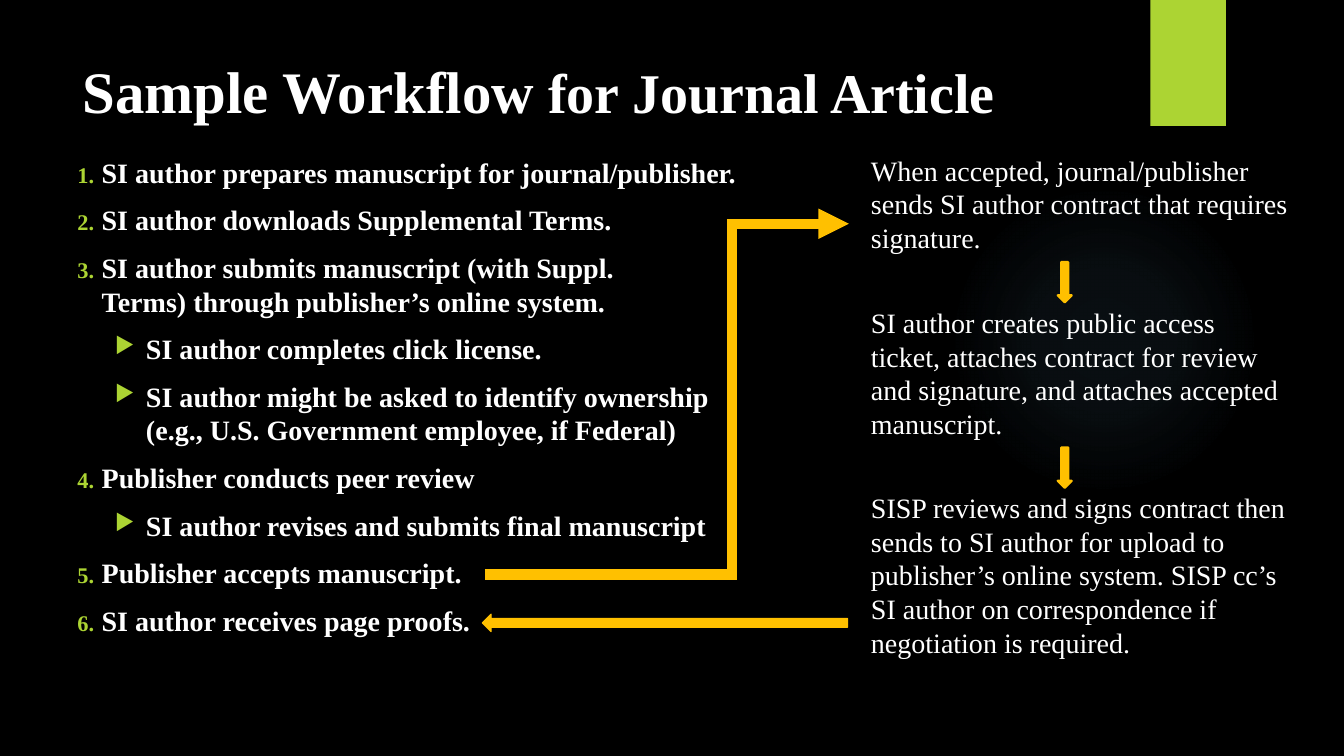
from dataclasses import dataclass

from pptx import Presentation
from pptx.dml.color import RGBColor
from pptx.enum.shapes import MSO_CONNECTOR as Connector, MSO_SHAPE as Preset
from pptx.enum.text import MSO_ANCHOR as Anchor, PP_ALIGN as Align
from pptx.oxml import parse_xml
from pptx.oxml.ns import nsdecls, qn
from pptx.util import Inches, Pt

BLACK = RGBColor(0x00, 0x00, 0x00)
WHITE = RGBColor(0xFF, 0xFF, 0xFF)
LIME = RGBColor(0xAC, 0xD4, 0x33)
AMBER = RGBColor(0xFF, 0xC0, 0x00)
GLOW = RGBColor(0x7A, 0xC4, 0xF0)
SERIF = "Times New Roman"


@dataclass(frozen=True)
class Step:
    lines: tuple[str, ...]
    level: int = 0


@dataclass(frozen=True)
class Stage:
    text: str
    gap: float


@dataclass(frozen=True)
class Arrow:
    left: float
    top: float
    width: float
    height: float
    outline: float
    rotation: int = 0


STEPS = (
    Step(("SI author prepares manuscript for journal/publisher.",)),
    Step(("SI author downloads Supplemental Terms.",)),
    Step(("SI author submits manuscript (with Suppl. ", "Terms) through publisher’s online system.")),
    Step(("SI author completes click license.",), 1),
    Step(("SI author might be asked to identify ownership ", "(e.g., U.S. Government employee, if Federal)"), 1),
    Step(("Publisher conducts peer review",)),
    Step(("SI author revises and submits final manuscript",), 1),
    Step(("Publisher accepts manuscript.",)),
    Step(("SI author receives page proofs.",)),
)
STAGES = (
    Stage("When accepted, journal/publisher sends SI author contract that requires signature.", 0),
    Stage("SI author creates public access ticket, attaches contract for review and signature, "
          "and attaches accepted manuscript.", 37),
    Stage("SISP reviews and signs contract then sends to SI author for upload to publisher’s online "
          "system. SISP cc’s SI author on correspondence if negotiation is required.", 36),
)
ARROWS = (
    Arrow(10.49, 2.6, 0.14, 0.4, 1.5),
    Arrow(10.49, 4.44, 0.14, 0.4, 1.5),
    Arrow(6.51, 4.37, 0.17, 3.62, 1, 90),
)


def element(markup: str):
    tag, rest = markup.split(" ", 1) if " " in markup.split(">")[0] else (markup.split(">")[0], "")
    if not rest:
        return parse_xml(markup.replace(tag, f"{tag} {nsdecls('a')}", 1))
    return parse_xml(f"{tag} {nsdecls('a')} {rest}")


def add_run(paragraph, text: str, size: float, bold: bool = False) -> None:
    run = paragraph.add_run()
    run.text = text
    run.font.name = SERIF
    run.font.size = Pt(size)
    run.font.bold = bold
    run.font.color.rgb = WHITE


def add_column(slide, left: float, top: float, width: float, height: float):
    frame = slide.shapes.add_textbox(Inches(left), Inches(top), Inches(width), Inches(height)).text_frame
    frame.word_wrap = True
    frame.vertical_anchor = Anchor.TOP
    return frame


def next_paragraph(frame, index: int, gap: float):
    paragraph = frame.add_paragraph() if index else frame.paragraphs[0]
    if index:
        paragraph.space_before = Pt(gap)
    return paragraph


def add_bullet(paragraph, level: int) -> None:
    indent, hanging = ((0.37, 0.24), (0.81, 0.31))[level]
    paragraph.level = level
    properties = paragraph._p.get_or_add_pPr()
    properties.set("marL", str(Inches(indent)))
    properties.set("indent", str(-Inches(hanging)))
    marker = '<a:buChar char="▶"/>' if level else '<a:buAutoNum type="arabicPeriod"/>'
    for markup in (f'<a:buClr><a:srgbClr val="{LIME}"/></a:buClr>', '<a:buSzPct val="80000"/>', marker):
        properties.append(element(markup))


def add_steps(slide) -> None:
    frame = add_column(slide, 0.54, 1.49, 7, 5.01)
    for index, step in enumerate(STEPS):
        paragraph = next_paragraph(frame, index, 10)
        add_bullet(paragraph, step.level)
        for number, line in enumerate(step.lines):
            if number:
                paragraph.add_line_break()
            add_run(paragraph, line, 20, True)


def add_stages(slide) -> None:
    frame = add_column(slide, 8.54, 1.47, 4.34, 5.17)
    for index, stage in enumerate(STAGES):
        add_run(next_paragraph(frame, index, stage.gap), stage.text, 20)


def add_plain(slide, preset: Preset, left: float, top: float, width: float, height: float):
    shape = slide.shapes.add_shape(preset, Inches(left), Inches(top), Inches(width), Inches(height))
    shape.shadow.inherit = False
    shape.line.fill.background()
    return shape


def add_backdrop(slide) -> None:
    glow = add_plain(slide, Preset.OVAL, 9.41, 1.83, 3.08, 3.08)
    stops = "".join(
        f'<a:gs pos="{position}000"><a:srgbClr val="{GLOW}"><a:alpha val="{alpha}000"/></a:srgbClr></a:gs>'
        for position, alpha in ((0, 7), (36, 6), (69, 0))
    )
    center = '<a:fillToRect l="50000" t="50000" r="50000" b="50000"/>'
    gradient = element(f'<a:gradFill rotWithShape="1"><a:gsLst>{stops}</a:gsLst>'
                       f'<a:path path="circle">{center}</a:path></a:gradFill>')
    glow._element.spPr.find(qn("a:prstGeom")).addnext(gradient)
    tab = add_plain(slide, Preset.RECTANGLE, 11.41, 0, 0.75, 1.25)
    tab.fill.solid()
    tab.fill.fore_color.rgb = LIME


def add_title(slide) -> None:
    title = slide.shapes.title
    title.left, title.top, title.width, title.height = map(Inches, (0.72, 0.44, 12.28, 1.66))
    frame = title.text_frame
    frame.vertical_anchor = Anchor.TOP
    frame.margin_top = Inches(0.1)
    heading = frame.paragraphs[0]
    heading.alignment = Align.LEFT
    add_run(heading, "Sample Workflow", 42, True)
    add_run(heading, " for Journal Article", 40, True)


def add_arrow(slide, arrow: Arrow) -> None:
    shape = add_plain(slide, Preset.DOWN_ARROW, arrow.left, arrow.top, arrow.width, arrow.height)
    shape.rotation = arrow.rotation
    shape.fill.solid()
    shape.fill.fore_color.rgb = AMBER
    shape.line.color.rgb = AMBER
    shape.line.width = Pt(arrow.outline)


def add_acceptance_link(slide) -> None:
    link = slide.shapes.add_connector(Connector.ELBOW, Inches(4.81), Inches(5.7), Inches(8.42), Inches(2.22))
    link.line.color.rgb = AMBER
    link.line.width = Pt(7.25)
    properties = link._element.spPr
    geometry = properties.find(qn("a:prstGeom"))
    for guides in geometry.findall(qn("a:avLst")):
        geometry.remove(guides)
    geometry.append(element('<a:avLst><a:gd name="adj1" fmla="val 68000"/></a:avLst>'))
    stroke = properties.find(qn("a:ln"))
    stroke.append(element('<a:miter lim="800000"/>'))
    stroke.append(element('<a:tailEnd type="triangle"/>'))
    properties.append(element("<a:effectLst></a:effectLst>"))


def main() -> None:
    deck = Presentation()
    deck.slide_width, deck.slide_height = Inches(13.33), Inches(7.5)
    slide = deck.slides.add_slide(deck.slide_layouts[5])
    slide.background.fill.solid()
    slide.background.fill.fore_color.rgb = BLACK
    add_backdrop(slide)
    add_title(slide)
    add_steps(slide)
    add_stages(slide)
    for arrow in ARROWS:
        add_arrow(slide, arrow)
    add_acceptance_link(slide)
    deck.save("out.pptx")


if __name__ == "__main__":
    main()
